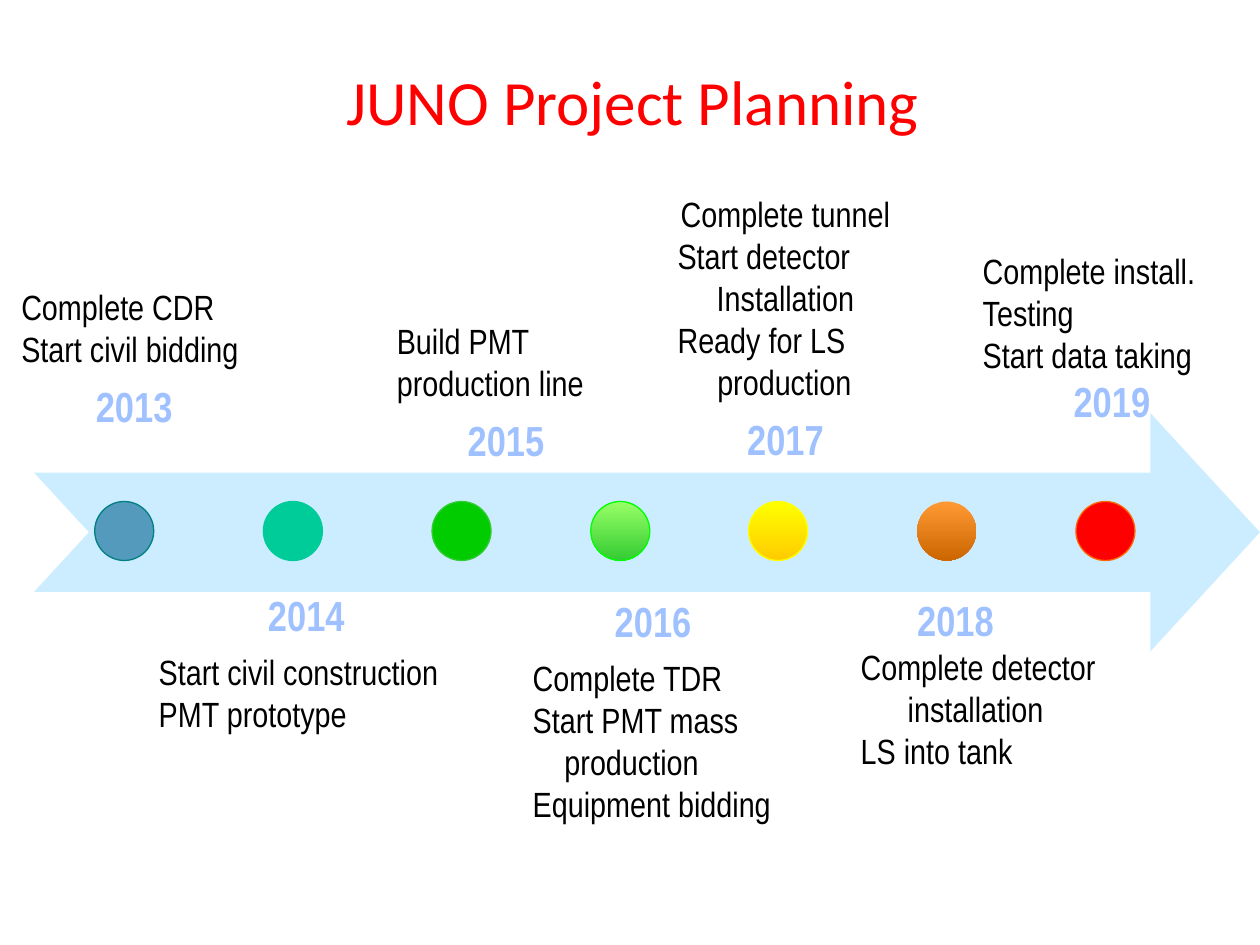
from dataclasses import dataclass

from pptx import Presentation
from pptx import util as u
from pptx.dml import color as col
from pptx.enum import shapes, text


@dataclass(frozen=True)
class Theme:
    """Colours, fonts and type sizes of the slide."""
    head: str = "FF0000"
    body: str = "000000"
    year: str = "A0C1FF"
    band: str = "CCECFF"
    title_font: str = "Calibri"
    font: str = "Arial Narrow"
    title_size: int = 36
    year_size: int = 24
    size: int = 20


T = Theme()
MID = text.PP_ALIGN.CENTER
LEFT = text.PP_ALIGN.LEFT

DOT_TOP, DOT_SIZE = 10.11, 1.19
DOTS = [
    (1.91, ["539ABD"], "008080"),
    (5.31, ["00CC99"], "00CC99"),
    (8.71, ["00CC00"], "33CC33"),
    (11.91, ["99FF66", "33CC33"], "00FF00"),
    (15.09, ["FFFF00", "FFCC00"], "FFFF00"),
    (18.49, ["FF9933", "CC6600"], None),
    (21.69, ["FF0000"], "FF6600"),
]

NOTES = [
    (2013, (0.33, 5.66, 4.75, 3.15), {"gap": 6},
     [("Complete CDR", {}), ("Start civil bidding", {})]),
    (2014, (3.1, 11.79, 6.15, 3.15), {"gap": 6},
     [("Start civil construction", {}), ("PMT prototype", {})]),
    (2015, (7.9, 6.35, 4.6, 3.15), {"gap": 6},
     [("Build PMT production line", {})]),
    (2016, (10.64, 11.91, 5.05, 4.85), {"gap": 6},
     [("Complete TDR", {}), ("Start PMT mass", {}),
      ("production", {"indent": 0.64}), ("Equipment bidding", {})]),
    (2017, (13.56, 3.78, 4.55, 5.72), {"gap": 6},
     [("Complete tunnel", {"align": MID}), ("Start detector", {}),
      ("Installation", {"align": MID}), ("Ready for LS", {}),
      ("production", {"indent": 0.8})]),
    (2018, (17.25, 11.89, 4.95, 3.78), {"align": LEFT, "indent": 1.14},
     [("Complete detector", {}), ("installation", {"indent": 0.95}),
      ("LS into tank", {})]),
    (2019, (19.71, 4.93, 5.41, 3.78), {},
     [("Complete install.", {}), ("Testing", {}), ("Start data taking", {})]),
]


def rgb(code):
    """Turn a hex code into a colour."""
    return col.RGBColor.from_string(code)


def place(shape, *box):
    """Set left, top, width and height in centimetres."""
    shape.left, shape.top, shape.width, shape.height = map(u.Cm, box)


def write(para, words, *, font=T.font, size=T.size, color=T.body, bold=False,
          align=LEFT, indent=0, before=0, after=0):
    """Fill a paragraph with formatted text."""
    run = para.add_run()
    run.text = words
    run.font.name, run.font.size, run.font.bold = font, u.Pt(size), bold
    run.font.color.rgb = rgb(color)
    para.alignment = align
    para.space_before, para.space_after = u.Pt(before), u.Pt(after)
    if indent:
        para._p.get_or_add_pPr().set("marL", str(int(u.Cm(indent))))


def add_form(group, kind, box, fills, edge=None):
    """Add a preset shape with a solid or two-colour fill."""
    form = group.shapes.add_shape(kind, *map(u.Cm, box))
    form.shadow.inherit = False
    if len(fills) == 1:
        form.fill.solid()
        form.fill.fore_color.rgb = rgb(fills[0])
    else:
        form.fill.gradient()
        form.fill.gradient_angle = 270
        for stop, code in zip(form.fill.gradient_stops, fills):
            stop.color.rgb = rgb(code)
    if edge:
        form.line.color.rgb = rgb(edge)
        form.line.width = u.Pt(0.75)
    else:
        form.line.fill.background()
    return form


def add_band(slide):
    """Add the time arrow with one dot per year."""
    group = slide.shapes.add_group_shape()
    arrow = add_form(group, shapes.MSO_SHAPE.NOTCHED_RIGHT_ARROW,
                     (0.69, 8.33, 24.71, 4.8), [T.band])
    arrow.adjustments[0], arrow.adjustments[1] = 0.5, 0.46
    for left, fills, edge in DOTS:
        add_form(group, shapes.MSO_SHAPE.OVAL,
                 (left, DOT_TOP, DOT_SIZE, DOT_SIZE), fills, edge)


def add_note(slide, year, box, form, lines):
    """Add a year and its steps, odd years above the arrow and even below."""
    frame = slide.shapes.add_textbox(*map(u.Cm, box)).text_frame
    frame.word_wrap = True
    frame.margin_left = frame.margin_right = u.Cm(0.1)
    frame.margin_top = frame.margin_bottom = u.Cm(0.1)
    above = year % 2 == 1
    look = {"size": T.year_size, "color": T.year, "bold": True, "align": MID}
    look.update(form)
    look["before" if above else "after"] = look.pop("gap", 0)
    label = (str(year), look)
    rows = [*lines, label] if above else [label, *lines]
    for i, (words, style) in enumerate(rows):
        para = frame.add_paragraph() if i else frame.paragraphs[0]
        write(para, words, **style)


def add_title(slide):
    """Move and fill the title placeholder."""
    title = slide.shapes.title
    place(title, 0, 1.12, 25.5, 1.8)
    title.text_frame.vertical_anchor = text.MSO_ANCHOR.MIDDLE
    write(title.text_frame.paragraphs[0], "JUNO Project Planning",
          font=T.title_font, size=T.title_size, color=T.head, align=MID)


def main():
    """Build and save the slide."""
    deck = Presentation()
    deck.slide_width, deck.slide_height = u.Cm(25.4), u.Cm(19.05)
    slide = deck.slides.add_slide(deck.slide_layouts[5])
    add_title(slide)
    add_band(slide)
    for note in NOTES:
        add_note(slide, *note)
    deck.save("out.pptx")


if __name__ == "__main__":
    main()
